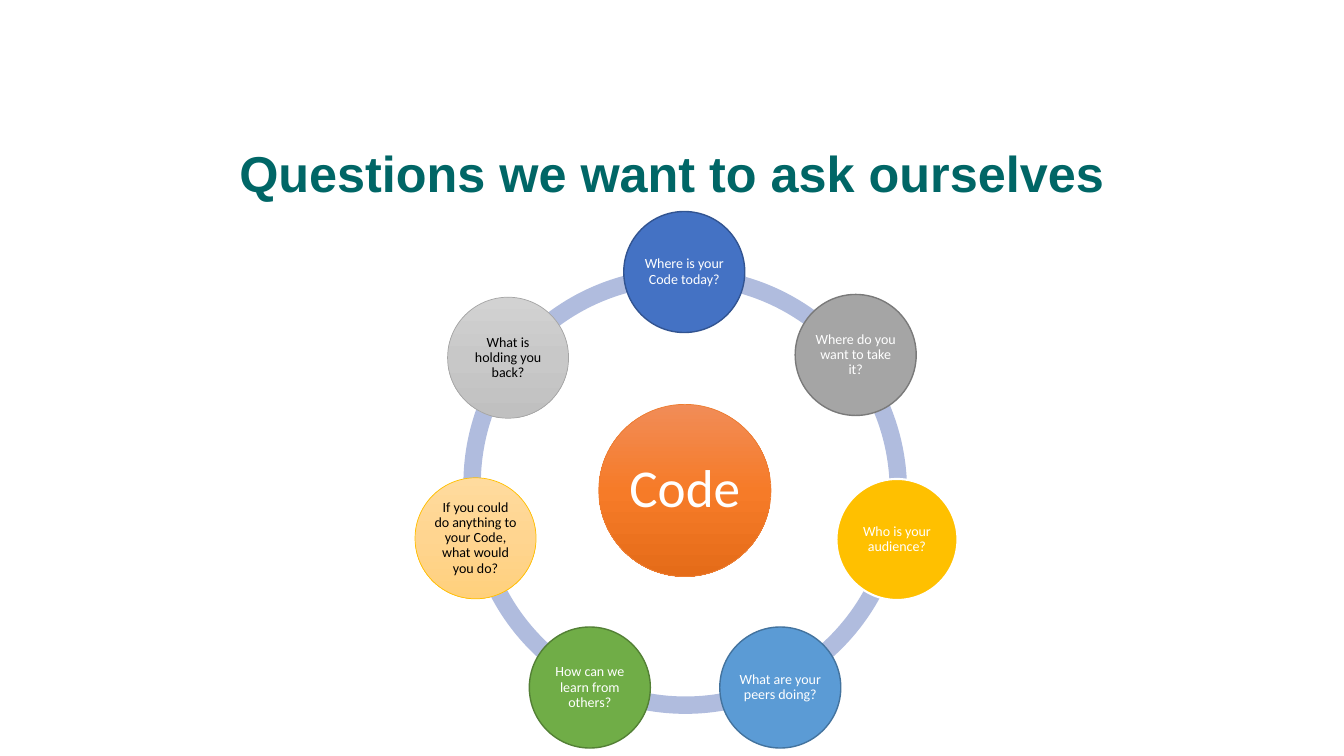
import copy

import pptx
import pptx.dml.color
import pptx.enum.shapes
import pptx.enum.text
import pptx.oxml.ns
import pptx.util
from pptx.util import Cm

RING_SIZE = 11.23
RING_THICKNESS = 0.039
RING_COLOUR = "B0BCDE"
QUESTION_SIZE = 3.05
HUB_SIZE = 4.34

RING_ARCS = [
    (11.56, 6.76, 217.43, 270.91),
    (11.68, 6.58, 165.31, 215.06),
    (11.73, 6.81, 116.92, 167.83),
    (11.66, 6.76, 64.16, 115.91),
    (11.63, 6.76, 12.66, 63.92),
    (11.63, 6.76, 321.43, 12.86),
    (11.63, 6.76, 270, 321.43),
]

QUESTIONS = [
    ("Where is your Code today?", 15.72, 5.33, ["4472C4"], "325491", 1, "FFFFFF"),
    ("Where do you want to take it?", 20.04, 7.42, ["A5A5A5"], "7A7A7A", 1, "FFFFFF"),
    ("Who is your audience?", 21.08, 12.07, ["FFC000"], "FFFFFF", 1.5, "FFFFFF"),
    ("What are your peers doing?", 18.14, 15.8, ["5B9BD5"], "43739E", 1, "FFFFFF"),
    ("How can we learn from others?", 13.34, 15.8, ["70AD47"], "538035", 1, "FFFFFF"),
    ("If you could do anything to your Code, what would you do?", 10.46, 12.04,
     ["FFDB9E", "FFD590", "FFD07C"], "FFC000", 0.5, "000000"),
    ("What is holding you back?", 11.28, 7.49,
     ["D2D2D2", "C8C8C8", "C0C0C0"], "A5A5A5", 0.5, "000000"),
]


def colour(hex_string):
    return pptx.dml.color.RGBColor.from_string(hex_string)


def apply(target, formats):
    for name, value in formats.items():
        setattr(target, name, value)


def write(frame, wording, font_name, size, hex_string, bold, anchor, inset):
    margins = {f"margin_{side}": Cm(inset) for side in ("left", "top", "right", "bottom")}
    apply(frame, {
        "word_wrap": True,
        "auto_size": pptx.enum.text.MSO_AUTO_SIZE.NONE,
        "vertical_anchor": anchor,
        **margins,
    })
    frame.text = wording
    paragraph = frame.paragraphs[0]
    apply(paragraph, {"alignment": pptx.enum.text.PP_ALIGN.CENTER, "line_spacing": 0.9})
    font = paragraph.runs[0].font
    apply(font, {"name": font_name, "size": pptx.util.Pt(size), "bold": bold})
    font.color.rgb = colour(hex_string)


def paint(shape, shades):
    if len(shades) == 1:
        shape.fill.solid()
        shape.fill.fore_color.rgb = colour(shades[0])
        return
    shape.fill.gradient()
    shape.fill.gradient_angle = 270
    stop_list = shape.element.spPr.find(".//" + pptx.oxml.ns.qn("a:gsLst"))
    while len(stop_list) < len(shades):
        stop_list.append(copy.deepcopy(stop_list[0]))
    for index, (stop, shade) in enumerate(zip(shape.fill.gradient_stops, shades)):
        stop.position = index / (len(shades) - 1)
        stop.color.rgb = colour(shade)


def add_title(slide, wording):
    title = slide.shapes.title
    apply(title, {"left": Cm(0), "top": Cm(3.63), "width": Cm(33.87), "height": Cm(2.74)})
    write(title.text_frame, wording, "Arial", 36, "006666", True,
          pptx.enum.text.MSO_ANCHOR.TOP, 0.13)


def add_ring_arc(slide, left, top, start, end):
    arc = slide.shapes.add_shape(pptx.enum.shapes.MSO_SHAPE.BLOCK_ARC,
                                 Cm(left), Cm(top), Cm(RING_SIZE), Cm(RING_SIZE))
    for index, value in enumerate((start * 0.6, end * 0.6, RING_THICKNESS)):
        arc.adjustments[index] = value
    arc.shadow.inherit = False
    arc.line.fill.background()
    paint(arc, [RING_COLOUR])


def add_circle(slide, wording, left, top, shades, outline, outline_width, text_colour,
               size=QUESTION_SIZE, text_size=10, inset=0.03):
    circle = slide.shapes.add_shape(pptx.enum.shapes.MSO_SHAPE.OVAL,
                                    Cm(left), Cm(top), Cm(size), Cm(size))
    circle.shadow.inherit = False
    paint(circle, shades)
    circle.line.color.rgb = colour(outline)
    circle.line.width = pptx.util.Pt(outline_width)
    write(circle.text_frame, wording, "Calibri", text_size, text_colour, False,
          pptx.enum.text.MSO_ANCHOR.MIDDLE, inset)


def main():
    presentation = pptx.Presentation()
    apply(presentation, {"slide_width": Cm(33.87), "slide_height": Cm(19.05)})
    slide = presentation.slides.add_slide(presentation.slide_layouts[5])
    add_title(slide, "Questions we want to ask ourselves")
    for arc in RING_ARCS:
        add_ring_arc(slide, *arc)
    add_circle(slide, "Code", 15.09, 10.19, ["F18C57", "F67B28", "E56C19"], "ED7D31", 0.5,
               "FFFFFF", size=HUB_SIZE, text_size=38, inset=0.13)
    for question in QUESTIONS:
        add_circle(slide, *question)
    presentation.save("out.pptx")


if __name__ == "__main__":
    main()
